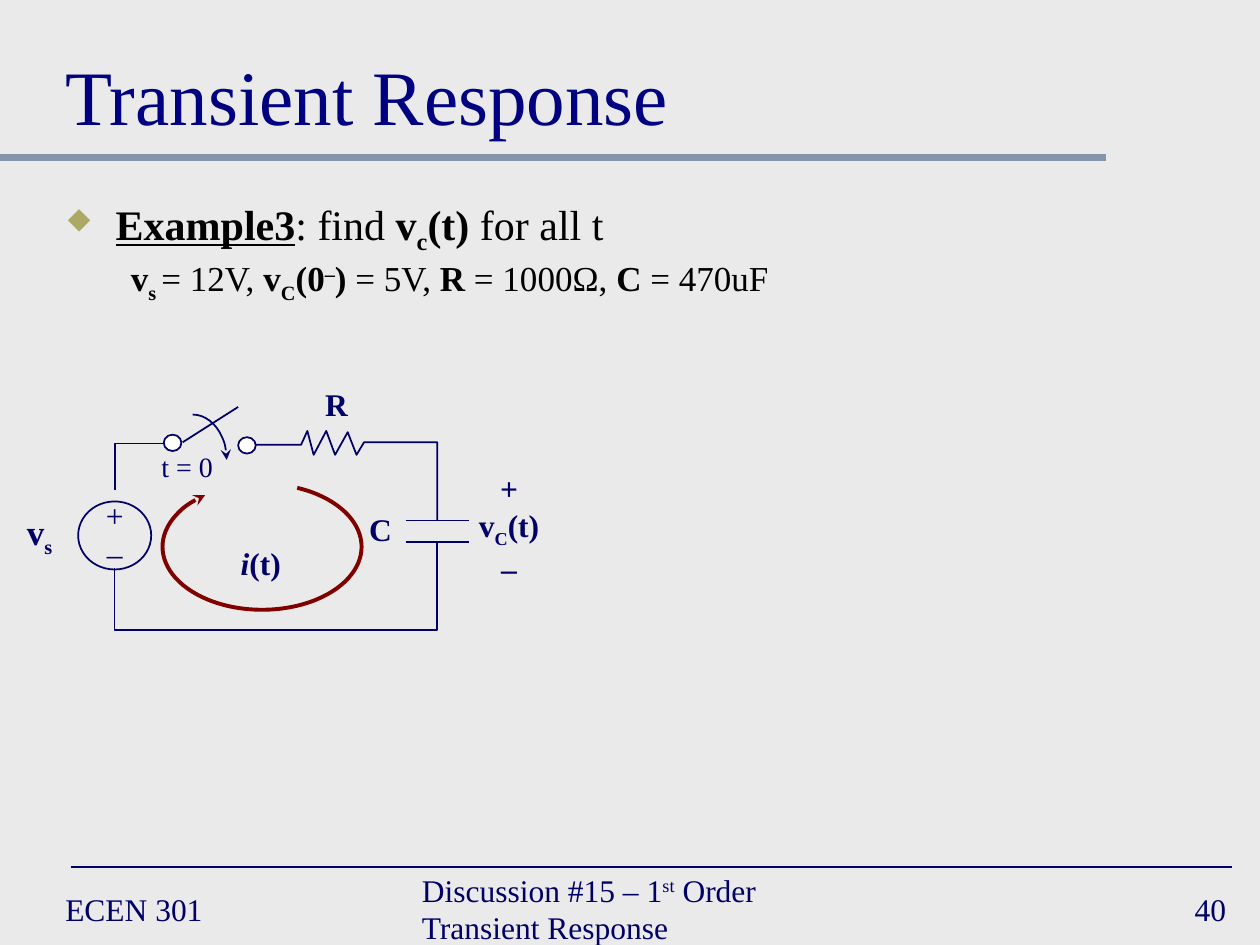
from dataclasses import dataclass

from lxml import etree
from pptx import Presentation
from pptx.dml.color import RGBColor
from pptx.enum.shapes import MSO_CONNECTOR, MSO_SHAPE
from pptx.enum.text import MSO_ANCHOR, MSO_AUTO_SIZE, PP_ALIGN
from pptx.oxml.ns import qn
from pptx.util import Inches, Pt

STRAIGHT = MSO_CONNECTOR.STRAIGHT
ARC, OVAL = MSO_SHAPE.ARC, MSO_SHAPE.OVAL
TOP, MIDDLE, BOTTOM = MSO_ANCHOR.TOP, MSO_ANCHOR.MIDDLE, MSO_ANCHOR.BOTTOM
LEFT, CENTER, RIGHT = PP_ALIGN.LEFT, PP_ALIGN.CENTER, PP_ALIGN.RIGHT
NO_AUTOFIT = MSO_AUTO_SIZE.NONE


@dataclass(frozen=True)
class Theme:
    """Colours, font and type sizes of the slide."""
    font: str = "Times New Roman"
    paper: str = "EAEAEA"
    ink: str = "000066"
    heading: str = "000080"
    body: str = "000000"
    bullet: str = "ACA964"
    rule: str = "8495A9"
    current: str = "800000"
    white: str = "FFFFFF"
    title_pt: int = 44
    lead_pt: int = 24
    detail_pt: int = 20
    label_pt: int = 18
    small_pt: int = 16


THEME = Theme()
BASELINES = {"_": "-25000", "^": "30000"}


def rgb(value):
    """Return a colour from its hex string."""
    return RGBColor.from_string(value)


def add_runs(p, runs, size, color):
    """Write (text, marks) runs; marks are b, i, u, _ (sub) and ^ (super)."""
    for text, marks in runs:
        r = p.add_run()
        r.text = text
        r.font.name, r.font.size = THEME.font, Pt(size)
        r.font.color.rgb = rgb(color)
        r.font.bold = "b" in marks
        r.font.italic = "i" in marks
        r.font.underline = "u" in marks
        for mark, offset in BASELINES.items():
            if mark in marks:
                r.font._element.set("baseline", offset)


def add_text(s, box, lines, size=THEME.label_pt, align=CENTER, anchor=TOP):
    """Add a one-colour text box with one paragraph for each list of runs."""
    tf = s.shapes.add_textbox(*map(Inches, box)).text_frame
    tf.word_wrap, tf.vertical_anchor = False, anchor
    for i, runs in enumerate(lines):
        p = tf.paragraphs[0] if i == 0 else tf.add_paragraph()
        p.alignment = align
        add_runs(p, runs, size, THEME.ink)


def add_line(s, start, end, color=THEME.ink, width=1):
    """Add a straight line."""
    c = s.shapes.add_connector(STRAIGHT, *map(Inches, start + end))
    c.line.color.rgb, c.line.width = rgb(color), Pt(width)
    etree.SubElement(c._element.spPr, qn("a:effectLst"))


def style_outline(sp, color=THEME.ink, width=1, fill=None):
    """Set the outline and optional fill of a shape."""
    sp.shadow.inherit = False
    sp.line.color.rgb, sp.line.width = rgb(color), Pt(width)
    if fill:
        sp.fill.solid()
        sp.fill.fore_color.rgb = rgb(fill)
    else:
        sp.fill.background()


def add_wire(s, *points):
    """Add an open polyline through the points."""
    start, *rest = [tuple(map(Inches, point)) for point in points]
    builder = s.shapes.build_freeform(*start)
    builder.add_line_segments(rest, close=False)
    style_outline(builder.convert_to_shape())


def add_oval(s, box, fill=None):
    """Add an outlined oval."""
    style_outline(s.shapes.add_shape(OVAL, *map(Inches, box)), fill=fill)


def add_arc_arrow(s, box, start, end, color=THEME.ink, width=1):
    """Add a clockwise arc between two angles in degrees, with an arrowhead."""
    sp = s.shapes.add_shape(ARC, *map(Inches, box))
    sp.adjustments[0], sp.adjustments[1] = start * 0.6, end * 0.6
    style_outline(sp, color, width)
    ln = sp._element.spPr.find(qn("a:ln"))
    etree.SubElement(ln, qn("a:tailEnd"), type="stealth")


def add_title(s):
    """Place and format the title."""
    title = s.shapes.title
    title.left, title.top = Inches(0.42), Inches(0.17)
    title.width, title.height = Inches(9.17), Inches(1)
    tf = title.text_frame
    tf.text = "Transient Response"
    tf.auto_size, tf.vertical_anchor = NO_AUTOFIT, BOTTOM
    p = tf.paragraphs[0]
    p.alignment = LEFT
    font = p.runs[0].font
    font.name, font.size = THEME.font, Pt(THEME.title_pt)
    font.color.rgb = rgb(THEME.heading)


def set_indent(p, margin, hanging):
    """Set the left margin and hanging indent of a paragraph."""
    pPr = p._p.get_or_add_pPr()
    pPr.set("marL", str(Inches(margin)))
    pPr.set("indent", str(-Inches(hanging)))
    return pPr


def add_problem(s):
    """Add the problem statement with its given values."""
    box = map(Inches, (0.44, 1.53, 8.81, 1.05))
    tf = s.shapes.add_textbox(*box).text_frame
    tf.word_wrap = True
    lead = tf.paragraphs[0]
    pPr = set_indent(lead, 0.38, 0.38)
    color = etree.SubElement(pPr, qn("a:buClr"))
    etree.SubElement(color, qn("a:srgbClr"), val=THEME.bullet)
    etree.SubElement(pPr, qn("a:buSzPct"), val="70000")
    etree.SubElement(pPr, qn("a:buChar"), char="◆")
    add_runs(lead, [("Example3", "bu"), (": find ", ""), ("v", "b"),
                    ("c", "b_"), ("(t)", "b"), (" for all t", "")],
             THEME.lead_pt, THEME.body)
    detail = tf.add_paragraph()
    detail.level = 1
    set_indent(detail, 0.81, 0.31)
    detail.space_before = Pt(4)
    add_runs(detail, [("v", "b"), ("s ", "b_"), ("= 12V,", ""), (" v", "b"),
                      ("C", "b_"), ("(0", "b"), ("–", "b^"), (") ", "b"),
                      ("= 5V, ", ""), ("R", "b"), (" = 1000Ω, ", ""),
                      ("C ", "b"), ("= 470uF", "")],
             THEME.detail_pt, THEME.body)
    for p in tf.paragraphs:
        p.line_spacing = 0.9


def add_circuit(s):
    """Draw the switched RC circuit."""
    add_wire(s, (3.47, 4.3), (3.47, 5), (0.91, 5), (0.91, 4.51))
    add_wire(s, (0.91, 3.89), (0.91, 3.52), (1.3, 3.52))
    add_wire(s, (2.03, 3.53), (2.39, 3.53), (2.44, 3.42), (2.49, 3.61),
             (2.59, 3.42), (2.66, 3.61), (2.76, 3.43), (2.83, 3.61),
             (2.89, 3.51), (3.47, 3.51), (3.47, 4.13))
    for y in (4.13, 4.3):
        add_line(s, (3.22, y), (3.72, y))
    add_oval(s, (0.62, 3.98, 0.58, 0.54))
    for x, y in ((1.3, 3.45), (1.89, 3.47)):
        add_oval(s, (x, y, 0.14, 0.13), THEME.white)
    add_line(s, (1.45, 3.51), (1.89, 3.23))
    add_arc_arrow(s, (1.26, 3.29, 0.54, 0.72), 270, 0)
    add_arc_arrow(s, (1.29, 3.84, 1.58, 1), 300.8, 222.3, THEME.current, 2.25)


def add_circuit_labels(s):
    """Label the circuit's parts, voltages and current."""
    add_text(s, (2.45, 3.01, 0.44, 0.4), [[("R", "b")]])
    add_text(s, (2.83, 4, 0.38, 0.4), [[("C", "b")]])
    add_text(s, (0.11, 4, 0.41, 0.42), [[("v", "b"), ("s", "b_")]],
             THEME.detail_pt)
    add_text(s, (0.74, 3.89, 0.34, 0.7), [[("+", "")], [("–", "")]])
    add_text(s, (1.18, 3.52, 0.61, 0.37), [[("t = 0", "")]], THEME.small_pt)
    add_text(s, (1.81, 4.27, 0.52, 0.4), [[("i", "bi"), ("(t)", "b")]])
    add_text(s, (3.69, 3.67, 0.7, 1),
             [[("+", "b")], [("v", "b"), ("C", "b_"), ("(t)", "b")],
              [("–", "b")]])


def add_footer(s):
    """Add the course, lecture name and page number."""
    lecture = [("Discussion #15 – 1", ""), ("st", "^"),
               (" Order Transient Response", "")]
    for left, width, runs, align in (
            (0.42, 2.17, [("ECEN 301", "")], LEFT),
            (3.25, 3.83, lecture, LEFT),
            (7.75, 2.08, [("40", "")], RIGHT)):
        add_text(s, (left, 7, width, 0.42), [runs], align=align, anchor=MIDDLE)


def main():
    """Build and save the slide."""
    prs = Presentation()
    prs.slide_width, prs.slide_height = Inches(10), Inches(7.5)
    s = prs.slides.add_slide(prs.slide_layouts[5])
    s.background.fill.solid()
    s.background.fill.fore_color.rgb = rgb(THEME.paper)
    add_line(s, (0, 1.25), (8.78, 1.25), THEME.rule, 4)
    add_line(s, (0.56, 6.88), (9.78, 6.88))
    add_footer(s)
    add_title(s)
    add_problem(s)
    add_circuit(s)
    add_circuit_labels(s)
    prs.save("out.pptx")


if __name__ == "__main__":
    main()
